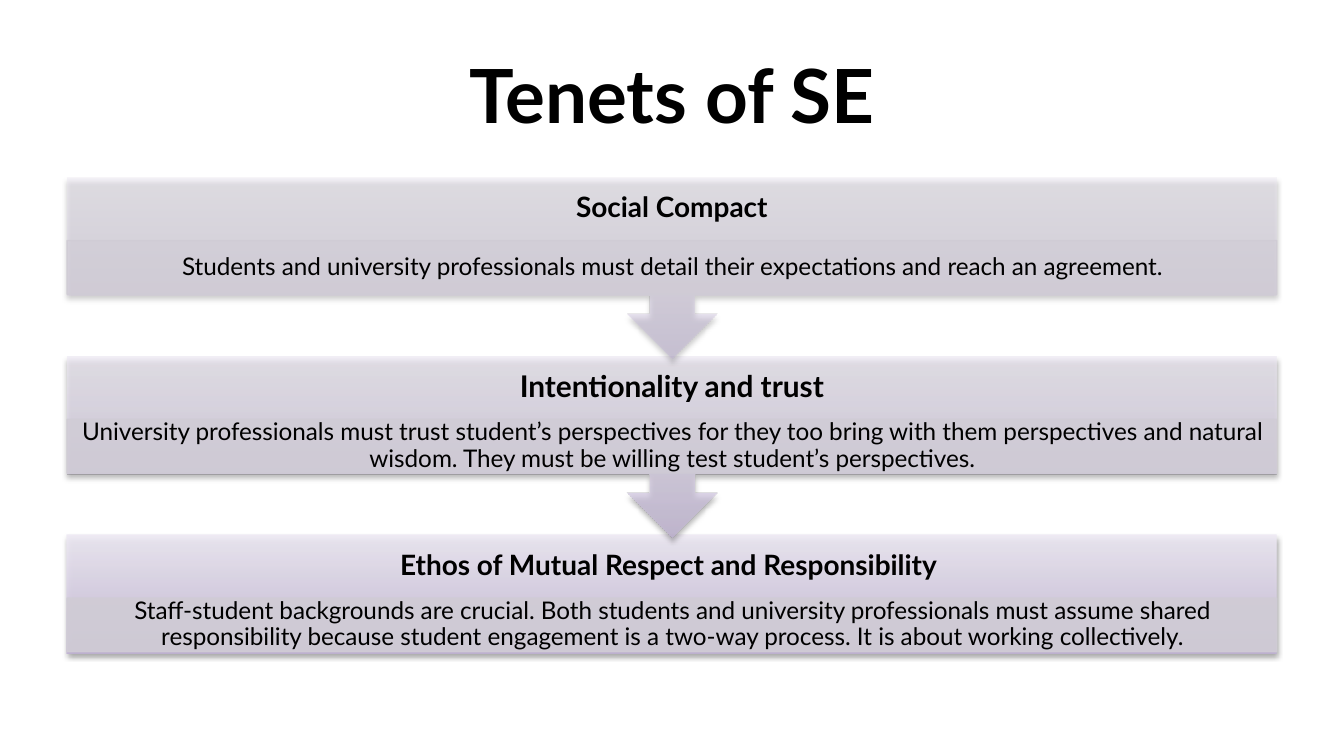
from dataclasses import dataclass

from lxml.etree import SubElement
from pptx import Presentation
from pptx.dml.color import RGBColor
from pptx.enum.shapes import MSO_SHAPE as Shape
from pptx.enum.text import MSO_ANCHOR as Anchor, PP_ALIGN as Align
from pptx.oxml.ns import qn
from pptx.util import Inches, Pt


@dataclass(frozen=True)
class Theme:
    font: str = "Lato"
    text: str = "000000"
    band: str = "D0CCD5"
    gradient: tuple = ((0, "BFB1D4"), (35, "D2C9E0"), (100, "EEEAF4"))
    title_size: int = 40
    body_size: int = 13


THEME = Theme()
WIDTH = 10
HEIGHT = WIDTH * 9 / 16
MARGIN = 0.05 * WIDTH
TOP, PITCH = 1.32, 1.33
CALLOUT_HEIGHT, BOX_HEIGHT, HEADER_HEIGHT, BAND_HEIGHT = 1.35, 0.88, 0.47, 0.4

# heading, heading size, detail, opacity in percent
TENETS = [
    ("Social Compact", 15,
     "Students and university professionals must detail their expectations "
     "and reach an agreement.", 50),
    ("Intentionality and trust", 16,
     "University professionals must trust student’s perspectives for they too "
     "bring with them perspectives and natural wisdom. They must be willing "
     "test student’s perspectives.", 70),
    ("Ethos of Mutual Respect and Responsibility ", 15,
     "Staff-student backgrounds are crucial. Both students and university "
     "professionals must assume shared responsibility because student "
     "engagement is a two-way process. It is about working collectively.", 90),
]


def inches(box):
    return [Inches(length) for length in box]


def write(shape, text, *, size, bold=False, spacing=None, insets=(0.1, 0.05)):
    frame = shape.text_frame
    frame.word_wrap = True
    frame.vertical_anchor = Anchor.MIDDLE
    frame.margin_left = frame.margin_right = Inches(insets[0])
    frame.margin_top = frame.margin_bottom = Inches(insets[1])
    paragraph = frame.paragraphs[0]
    paragraph.alignment = Align.CENTER
    paragraph.line_spacing = spacing
    run = paragraph.add_run()
    run.text = text
    run.font.name = THEME.font
    run.font.size = Pt(size)
    run.font.bold = bold
    run.font.color.rgb = RGBColor.from_string(THEME.text)


def add_color(parent, color, opacity):
    element = SubElement(parent, qn("a:srgbClr"), val=color)
    SubElement(element, qn("a:alpha"), val=str(opacity * 1000))


def fill_gradient(shape, opacity):
    """Fill from dark at the bottom to light at the top, however it is turned."""
    shape.fill.gradient()
    shape.fill.gradient_angle = 90
    gradient = shape._element.spPr.find(qn("a:gradFill"))
    gradient.set("rotWithShape", "0")
    stops = gradient.find(qn("a:gsLst"))
    for stop in list(stops):
        stops.remove(stop)
    for position, color in THEME.gradient:
        stop = SubElement(stops, qn("a:gs"), pos=str(position * 1000))
        add_color(stop, color, opacity)


def add_shadow(shape):
    shape.shadow.inherit = False
    effects = shape._element.spPr.find(qn("a:effectLst"))
    shadow = SubElement(effects, qn("a:outerShdw"), blurRad=str(Pt(3.1)),
                        dist=str(Pt(1.6)), dir="5400000", rotWithShape="0")
    add_color(shadow, "000000", 38)


def add_panel(shapes, box, opacity, has_arrow):
    kind = Shape.UP_ARROW_CALLOUT if has_arrow else Shape.RECTANGLE
    panel = shapes.add_shape(kind, *inches(box))
    panel.rotation = 180 if has_arrow else 0
    fill_gradient(panel, opacity)
    panel.line.fill.background()
    add_shadow(panel)


def add_band(shapes, box, opacity):
    band = shapes.add_shape(Shape.RECTANGLE, *inches(box))
    band.shadow.inherit = False
    color = RGBColor.from_string(THEME.band)
    band.fill.solid()
    band.fill.fore_color.rgb = color
    band.line.color.rgb = color
    band.line.width = Pt(0.75)
    properties = band._element.spPr
    line = properties.find(qn("a:ln"))
    for parent, alpha in ((properties, opacity), (line, 90)):
        fill_color = parent.find(qn("a:solidFill"))[0]
        SubElement(fill_color, qn("a:alpha"), val=str(alpha * 1000))


def add_tenet(shapes, box, tenet, has_arrow):
    heading, heading_size, detail, opacity = tenet
    left, top, width, height = box
    add_panel(shapes, box, opacity, has_arrow)
    header = shapes.add_textbox(*inches((left, top, width, HEADER_HEIGHT)))
    write(header, heading, size=heading_size, bold=True, spacing=0.9,
          insets=(0.12, 0.12))
    band_box = (left, top + HEADER_HEIGHT, width, BAND_HEIGHT)
    add_band(shapes, band_box, opacity)
    write(shapes.add_textbox(*inches(band_box)), detail,
          size=THEME.body_size, spacing=0.9, insets=(0.1, 0.02))


def add_title(slide, box, text):
    title = slide.shapes.title
    title.left, title.top, title.width, title.height = inches(box)
    write(title, text, size=THEME.title_size, bold=True)


def main():
    presentation = Presentation()
    presentation.slide_width = Inches(WIDTH)
    presentation.slide_height = Inches(HEIGHT)
    slide = presentation.slides.add_slide(presentation.slide_layouts[5])
    content_width = WIDTH - 2 * MARGIN
    add_title(slide, (MARGIN, 0.23, content_width, 0.94), "Tenets of SE")
    last = len(TENETS) - 1
    # Bottom to top, so that each arrow lies over the panel below it
    for row, tenet in reversed(list(enumerate(TENETS))):
        has_arrow = row < last
        height = CALLOUT_HEIGHT if has_arrow else BOX_HEIGHT
        box = (MARGIN, TOP + row * PITCH, content_width, height)
        add_tenet(slide.shapes, box, tenet, has_arrow)
    presentation.save("out.pptx")


if __name__ == "__main__":
    main()
